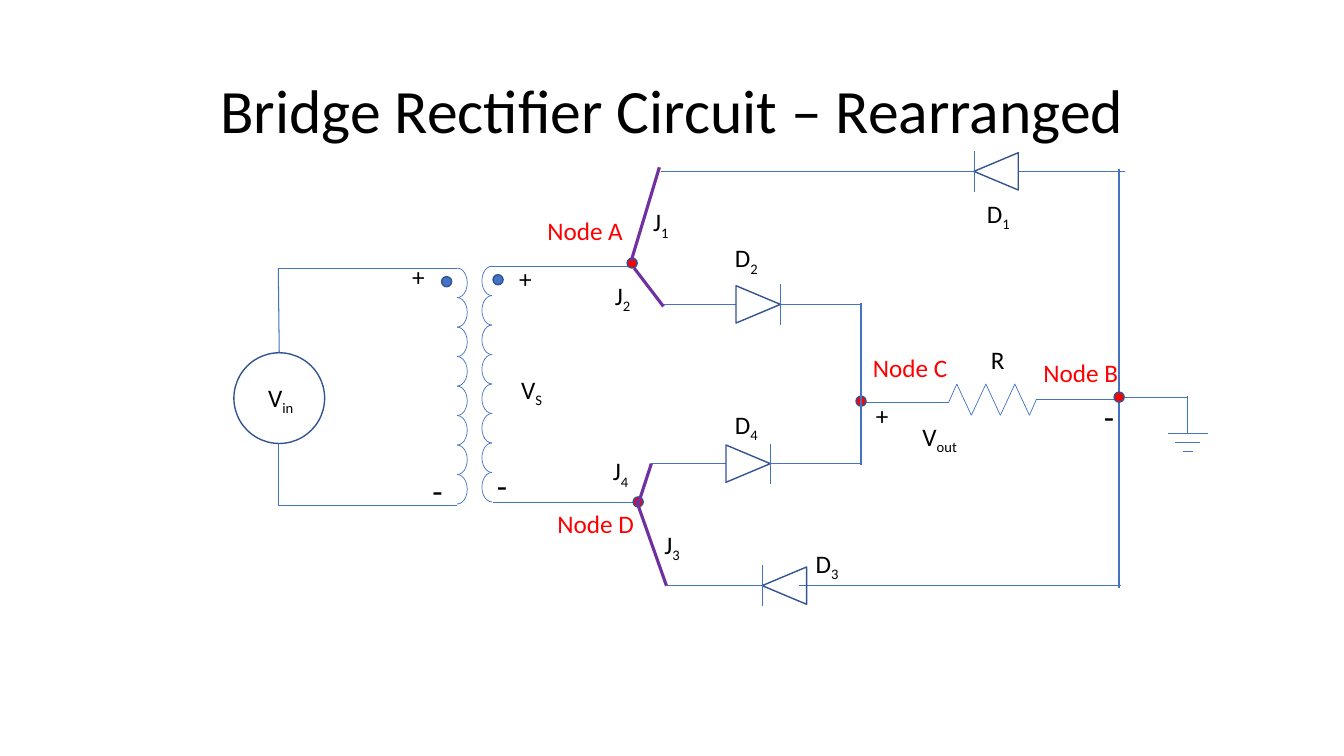
import dataclasses
import itertools

import pptx
import pptx.dml.color
import pptx.enum.shapes
import pptx.enum.text
import pptx.oxml
import pptx.oxml.ns
import pptx.util

SHAPE = pptx.enum.shapes.MSO_SHAPE
COLUMNS, ROWS = 1333, 750  # grid of hundredths of an inch
SUBSCRIPT = "-25000"


@dataclasses.dataclass(frozen=True)
class Theme:
    font: str = "Calibri"
    ink: str = "000000"
    wire: str = "4472C4"
    outline: str = "325491"
    node: str = "FF0000"
    jumper: str = "7030A0"
    title_size: float = 44
    label_size: float = 18
    minus_size: float = 24
    thin: float = 0.5
    medium: float = 0.75
    bold: float = 1
    heavy: float = 2.25


THEME = Theme()


def grid(cells):
    return pptx.util.Inches(cells / 100)


def rgb(value):
    return pptx.dml.color.RGBColor.from_string(value)


def apply(target, values):
    for name, value in values.items():
        setattr(target, name, value)


def style_span(span, size, color):
    apply(span.font, {"name": THEME.font, "size": pptx.util.Pt(size)})
    span.font.color.rgb = rgb(color)


@dataclasses.dataclass
class Region:
    """A box on the grid; its drawing methods count from its top left corner."""
    shapes: object
    left: float
    top: float
    width: float = 0
    height: float = 0

    def place(self, *lengths):
        x, y, *size = lengths
        return [grid(cells) for cells in (self.left + x, self.top + y, *size)]

    def line(self, start, end, weight=THEME.thin, color=THEME.wire):
        connector = self.shapes.add_connector(
            pptx.enum.shapes.MSO_CONNECTOR.STRAIGHT, *self.place(*start), *self.place(*end))
        connector.line.color.rgb = rgb(color)
        connector.line.width = pptx.util.Pt(weight)
        connector._element.spPr.append(pptx.oxml.parse_xml(
            f"<a:effectLst {pptx.oxml.ns.nsdecls('a')}/>"))

    def shape(self, kind, box, color=THEME.outline, weight=THEME.bold, fill=None):
        shape = self.shapes.add_shape(kind, *self.place(*box))
        shape.shadow.inherit = False
        shape.line.color.rgb = rgb(color)
        shape.line.width = pptx.util.Pt(weight)
        if fill:
            shape.fill.solid()
            shape.fill.fore_color.rgb = rgb(fill)
        else:
            shape.fill.background()
        return shape

    def dot(self, x, y, fill):
        self.shape(SHAPE.OVAL, (x, y, 10, 10), fill=fill)

    def label(self, x, y, text, subscript="", width=71, height=40,
              size=THEME.label_size, color=THEME.ink):
        frame = self.shapes.add_textbox(*self.place(x, y, width, height)).text_frame
        apply(frame, {"word_wrap": True,
                      "auto_size": pptx.enum.text.MSO_AUTO_SIZE.SHAPE_TO_FIT_TEXT})
        for part in filter(None, (text, subscript)):
            span = frame.paragraphs[0].add_run()
            span.text = part
            style_span(span, size, color)
        if subscript:
            span._r.get_or_add_rPr().set("baseline", SUBSCRIPT)

    def plus(self, x, y):
        self.label(x, y, "+", width=36)

    def minus(self, x, y):
        self.label(x, y, "-", width=36, height=50, size=THEME.minus_size)


def set_title(page, text):
    title = page.shapes.title
    apply(title, {"left": grid(92), "top": grid(40), "width": grid(1150), "height": grid(145)})
    apply(title.text_frame, {"vertical_anchor": pptx.enum.text.MSO_ANCHOR.MIDDLE,
                             "auto_size": pptx.enum.text.MSO_AUTO_SIZE.NONE,
                             "word_wrap": True})
    para = title.text_frame.paragraphs[0]
    apply(para, {"alignment": pptx.enum.text.PP_ALIGN.CENTER, "line_spacing": 0.9})
    span = para.add_run()
    span.text = text
    style_span(span, THEME.title_size, THEME.ink)


def draw_source(region):
    width, height, diameter = region.width, region.height, 90
    circle_top = 84
    for y in (0, height):
        region.line((0, y), (width, y))
    region.line((0, 0), (1, circle_top), THEME.medium)
    region.line((0, circle_top + diameter), (0, height), THEME.medium)
    region.shape(SHAPE.OVAL, (-44, circle_top, diameter, diameter))
    region.label(-20, 108, "V", "in")
    region.plus(123, -12)
    region.minus(143, 195)


def draw_winding(region, angles, dot_x, turns=8):
    """Stack half-circle turns; angles are the arc's start and end."""
    pitch = region.height / turns
    for turn in range(turns):
        arc = region.shape(SHAPE.ARC, (0, turn * pitch, region.width, pitch),
                           THEME.wire, THEME.thin)
        for index, angle in enumerate(angles):
            arc.adjustments[index] = angle
    region.dot(dot_x, 8.5, THEME.wire)


def draw_secondary(region):
    for x, y in ((0, 0), (2, region.height)):
        region.line((x, y), (x + region.width, y))
    region.plus(18, -8)
    region.minus(-4, 192)
    region.label(20, 102, "V", "S")


def draw_branch(region, diode, points_right, number, label, overlap=0):
    """Draw a diode between two leads; region spans the branch from lead to lead."""
    length, breadth, bar = 44, 37, 40
    tip = diode + length if points_right else diode
    region.line((0, 0), (diode, 0))
    region.line((diode + length - overlap, 0), (region.width, 0))
    triangle = region.shape(SHAPE.ISOSCELES_TRIANGLE,
                            (diode + (length - breadth) / 2, -length / 2, breadth, length))
    triangle.rotation = 90 if points_right else 270
    region.line((tip, -bar / 2), (tip, bar / 2))
    region.label(*label, "D", number)


def draw_load(region):
    first, step, low, high = 99, 14.4, 32, 1
    peaks = [(first + step * i, low if i % 2 else high) for i in range(6)]
    zigzag = [(91, 19), *peaks, (178, 16)]
    for start, end in itertools.pairwise(zigzag):
        region.line(start, end)
    region.line((0, 19), zigzag[0])
    region.line(zigzag[-1], (region.width, 16))
    region.label(123, -43, "R", width=33)
    region.label(55, 33, "V", "out")
    region.plus(9, 12)
    region.minus(235, 8)


def draw_ground(region):
    center = region.width
    region.line((0, 1), (center, 1))
    region.line((center, 0), (center, 38))
    for step, half in enumerate((20, 12.5, 5)):
        y = 37 + 9 * step
        region.line((center - half, y), (center + half, y))


def draw_nodes(region):
    for name, dot, label in (("A", (622, 256), (533, 209)), ("B", (1105, 389), (1025, 350)),
                             ("C", (849, 393), (856, 345)), ("D", (628, 493), (543, 499))):
        region.dot(*dot, THEME.node)
        region.label(*label, f"Node {name}", width=106, color=THEME.node)


def draw_jumpers(region):
    for number, label, start, end in (
            ("1", (638, 200), (626, 259), (654, 166)), ("2", (600, 273), (658, 304), (629, 266)),
            ("3", (649, 520), (661, 581), (631, 496)), ("4", (598, 447), (633, 500), (646, 460))):
        region.label(*label, "J", number)
        region.line(start, end, THEME.heavy, THEME.jumper)


def draw_circuit(page):
    shapes = page.shapes.add_group_shape().shapes
    whole = Region(shapes, 0, 0, COLUMNS, ROWS)
    draw_source(Region(shapes, 276, 266, 177, 235))
    draw_winding(Region(shapes, 443.5, 266, 20, 234), (162, 54.39), -5.5)
    draw_winding(Region(shapes, 478, 264, 20, 234), (53.61, 162), 11)
    draw_secondary(Region(shapes, 487, 264, 140, 234))
    whole.line((1110, 168), (1110, 583), THEME.bold)
    draw_branch(Region(shapes, 656, 170, 460), 310, False, "1", (313, 22))
    draw_branch(Region(shapes, 656, 302, 198), 74, True, "2", (63, -66))
    draw_branch(Region(shapes, 661, 581, 451), 95, False, "3", (138, -42), overlap=8)
    draw_branch(Region(shapes, 646, 460, 208), 74, True, "4", (73, -59))
    draw_load(Region(shapes, 850, 380, 256))
    draw_ground(Region(shapes, 1113, 393, 65))
    draw_nodes(whole)
    whole.line((854, 301), (854, 461), THEME.bold)
    draw_jumpers(Region(page.shapes, 0, 0, COLUMNS, ROWS))


def main():
    deck = pptx.Presentation()
    apply(deck, {"slide_width": grid(COLUMNS), "slide_height": grid(ROWS)})
    page = deck.slides.add_slide(deck.slide_layouts.get_by_name("Title Only"))
    set_title(page, "Bridge Rectifier Circuit – Rearranged")
    draw_circuit(page)
    deck.save("out.pptx")


if __name__ == "__main__":
    main()
